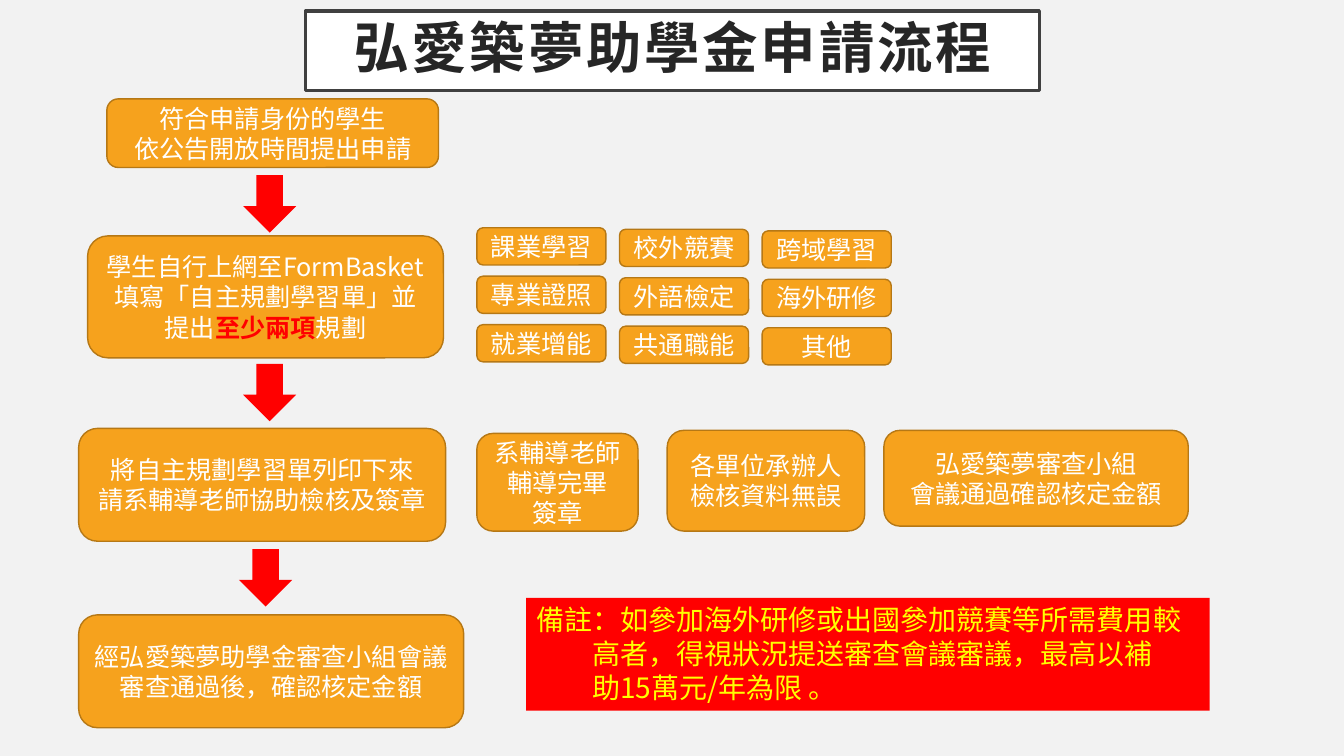
"""Build the scholarship application flow slide."""
import lxml.etree
import pptx
import pptx.dml.color
import pptx.enum.shapes
import pptx.enum.text
import pptx.oxml.ns
import pptx.util

Pt = pptx.util.Pt
SHAPE = pptx.enum.shapes.MSO_SHAPE
ALIGN = pptx.enum.text.PP_ALIGN
ANCHOR = pptx.enum.text.MSO_ANCHOR


def colour(hex_string):
    return pptx.dml.color.RGBColor.from_string(hex_string)


class FlowSlide:
    orange, brown, red, white = "F6A21D", "B67815", "FF0000", "FFFFFF"
    body = {"size": Pt(18), "name": "Noto Sans CJK SC", "bold": False}

    def __init__(self, slide, background):
        self.slide = slide
        slide.background.fill.solid()
        slide.background.fill.fore_color.rgb = colour(background)

    def block(self, kind, bounds, fill, outline=None, weight=1):
        block = self.slide.shapes.add_shape(kind, *map(Pt, bounds))
        block.shadow.inherit = False
        block.fill.solid()
        block.fill.fore_color.rgb = colour(fill)
        if outline:
            block.line.color.rgb = colour(outline)
            block.line.width = Pt(weight)
        else:
            block.line.fill.background()
        return block

    def wording(self, paragraph, text, ink=white, **changes):
        run = paragraph.add_run()
        run.text = text
        style = self.body | changes
        for attribute, value in style.items():
            setattr(run.font, attribute, value)
        run.font.color.rgb = colour(ink)
        properties = run._r.get_or_add_rPr()
        east_asian = lxml.etree.SubElement(properties, pptx.oxml.ns.qn("a:ea"))
        east_asian.set("typeface", style["name"])
        return properties

    def frame(self, block, anchor=ANCHOR.MIDDLE, align=ALIGN.CENTER):
        frame = block.text_frame
        frame.word_wrap = True
        frame.vertical_anchor = anchor
        frame.paragraphs[0].alignment = align
        return frame

    def title(self, bounds, text):
        block = self.block(SHAPE.RECTANGLE, bounds, self.white, "404040", 2.5)
        frame = self.frame(block)
        for side in ("left", "top", "right", "bottom"):
            setattr(frame, f"margin_{side}", Pt(14.4))
        heading = frame.paragraphs[0]
        heading.line_spacing = 0.9
        properties = self.wording(heading, text, "262626", size=Pt(39.6), bold=True)
        properties.set("spc", "200")

    def step(self, bounds, *lines):
        block = self.block(SHAPE.ROUNDED_RECTANGLE, bounds, self.orange, self.brown)
        frame = self.frame(block)
        for number, line in enumerate(lines):
            paragraph = frame.add_paragraph() if number else frame.paragraphs[0]
            paragraph.alignment = ALIGN.CENTER
            before, emphasis, after = line if isinstance(line, tuple) else (line, "", "")
            self.wording(paragraph, before)
            if emphasis:
                self.wording(paragraph, emphasis, self.red, bold=True)
                self.wording(paragraph, after)

    def arrow(self, left, top):
        self.block(SHAPE.RIGHT_ARROW, (left, top, 41, 38), self.red).rotation = 90

    def remark(self, bounds, label, lines, hanging):
        block = self.block(SHAPE.RECTANGLE, bounds, self.red)
        paragraph = self.frame(block, ANCHOR.TOP, ALIGN.LEFT).paragraphs[0]
        properties = paragraph._p.get_or_add_pPr()
        properties.set("marL", str(Pt(hanging)))
        properties.set("indent", str(-Pt(hanging)))
        style = {"ink": "FFFF00", "size": Pt(20)}
        self.wording(paragraph, label, name="Noto Sans CJK KR", **style)
        self.wording(paragraph, "：", name="Noto Sans CJK TC", **style)
        for number, line in enumerate(lines):
            if number:
                paragraph.add_line_break()
            self.wording(paragraph, line, name="Noto Sans CJK KR", **style)


def main():
    deck = pptx.Presentation()
    deck.slide_width, deck.slide_height = Pt(960), Pt(540)
    flow = FlowSlide(deck.slides.add_slide(deck.slide_layouts[6]), "F2F2F2")

    flow.title((218.2, 7.9, 524.2, 56.9), "弘愛築夢助學金申請流程")

    steps = [
        ((76.3, 70.6, 236.9, 49), "符合申請身份的學生", "依公告開放時間提出申請"),
        ((62.6, 168.5, 254.2, 87.1),
         ("學生自行上網至FormBasket填寫「自主規劃學習單」並提出", "至少兩項", "規劃")),
        ((56.2, 306, 262.1, 80.6), "將自主規劃學習單列印下來", "請系輔導老師協助檢核及簽章"),
        ((56.2, 439.2, 275, 80.6), "經弘愛築夢助學金審查小組會議", "審查通過後，確認核定金額"),
        ((340.6, 309.6, 115.2, 69.8), "系輔導老師", "輔導完畢", "簽章"),
        ((476.6, 307.4, 141.1, 72), "各單位承辦人", "檢核資料無誤"),
        ((631.4, 307.4, 217.4, 68.4), "弘愛築夢審查小組", "會議通過確認核定金額"),
    ]
    for bounds, *lines in steps:
        flow.step(bounds, *lines)

    for left, top in ((172.1, 126.7), (172.1, 261.4), (169.2, 393.8)):
        flow.arrow(left, top)

    plans = [
        ("課業學習", "專業證照", "就業增能"),
        ("校外競賽", "外語檢定", "共通職能"),
        ("跨域學習", "海外研修", "其他"),
    ]
    for column, names in enumerate(plans):
        for row, name in enumerate(names):
            left = 340.6 + 101.9 * column
            top = 162.7 + 34.6 * row + 1.1 * column
            flow.step((left, top, 92.2, 26.6), name)

    flow.remark(
        (375.8, 427, 488.2, 80.6),
        "備註",
        ("如參加海外研修或出國參加競賽等所需費用較",
         "高者，得視狀況提送審查會議審議，最高以補",
         "助15萬元/年為限 。"),
        hanging=40,
    )
    deck.save("out.pptx")


if __name__ == "__main__":
    main()
